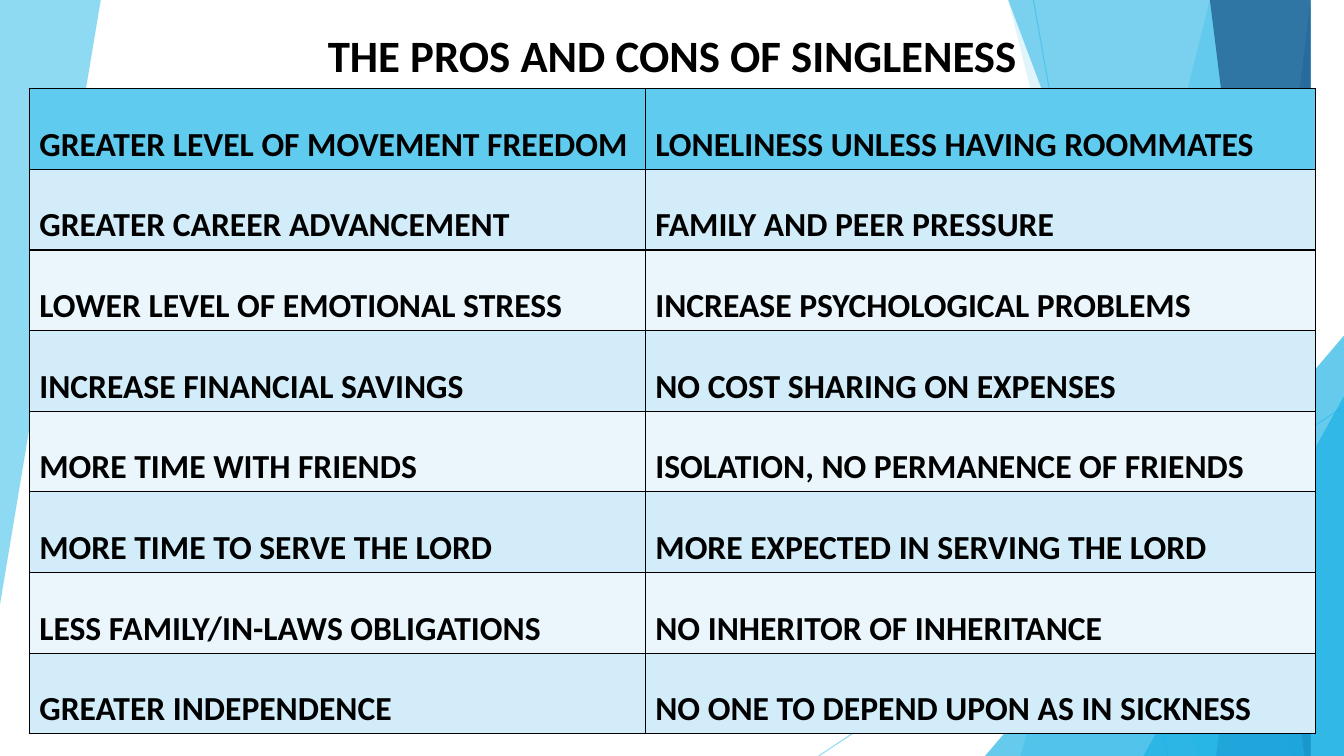
from lxml import etree
from pptx import Presentation
from pptx import util as u
from pptx.dml import color
from pptx.enum import shapes, text
from pptx.oxml import ns

WIDTH, HEIGHT = 13.33, 7.5
SKY, CYAN, BLUE, NAVY = "5FCBEF", "17B0E4", "2E83C3", "226292"
BLACK = "000000"
FONT = "Calibri"

PROS_AND_CONS = [
    ("GREATER LEVEL OF MOVEMENT FREEDOM", "LONELINESS UNLESS HAVING ROOMMATES"),
    ("GREATER CAREER ADVANCEMENT", "FAMILY AND PEER PRESSURE"),
    ("LOWER LEVEL OF EMOTIONAL STRESS", "INCREASE PSYCHOLOGICAL PROBLEMS"),
    ("INCREASE FINANCIAL SAVINGS", "NO COST SHARING ON EXPENSES"),
    ("MORE TIME WITH FRIENDS", "ISOLATION, NO PERMANENCE OF FRIENDS"),
    ("MORE TIME TO SERVE THE LORD", "MORE EXPECTED IN SERVING THE LORD"),
    ("LESS FAMILY/IN-LAWS OBLIGATIONS", "NO INHERITOR OF INHERITANCE"),
    ("GREATER INDEPENDENCE", "NO ONE TO DEPEND UPON AS IN SICKNESS"),
]


def set_color(fill, value, opacity=100):
    """Give a fill a solid colour and, if asked, an opacity in percent."""
    fill.solid()
    fill.fore_color.rgb = color.RGBColor.from_string(value)
    if opacity < 100:
        choice = fill._xPr.find(ns.qn("a:solidFill"))[0]
        etree.SubElement(choice, ns.qn("a:alpha"), val=str(opacity * 1000))


def set_font(paragraph, size):
    paragraph.font.name = FONT
    paragraph.font.size = u.Pt(size)
    paragraph.font.bold = True
    set_color(paragraph.font.fill, BLACK)


def finish_facet(shape, value, opacity):
    shape.shadow.inherit = False
    set_color(shape.fill, value, opacity)
    shape.line.fill.background()


def add_polygon(slide, points, value, opacity):
    builder = slide.shapes.build_freeform(*points[0], scale=u.Inches(1))
    builder.add_line_segments(points[1:], close=True)
    finish_facet(builder.convert_to_shape(), value, opacity)


def add_corner_triangle(slide, right, bottom, width, height):
    triangle = slide.shapes.add_shape(
        shapes.MSO_SHAPE.ISOSCELES_TRIANGLE,
        u.Inches(right - width), u.Inches(bottom - height),
        u.Inches(width), u.Inches(height))
    triangle.adjustments[0] = 1
    finish_facet(triangle, CYAN, 66)


def add_ray(slide, start, end):
    ray = slide.shapes.add_connector(
        shapes.MSO_CONNECTOR.STRAIGHT, *map(u.Inches, start + end))
    ray.line.width = u.Pt(0.75)
    set_color(ray.line.fill, SKY, 70)
    etree.SubElement(ray._element.spPr, ns.qn("a:effectLst"))


def add_backdrop(slide, left, top, width, height):
    right, bottom = left + width, top + height

    def add_side_facet(top_inset, bottom_inset, value, opacity):
        points = [(right - top_inset, top), (right, top),
                  (right, bottom), (right - bottom_inset, bottom)]
        add_polygon(slide, points, value, opacity)

    # Left wedge and thin rays
    wedge = [(left, top), (left + 0.94, top), (left, top + 6.22)]
    add_polygon(slide, wedge, SKY, 70)
    add_ray(slide, (right - 3.08, top), (right - 1.75, bottom))
    add_ray(slide, (right, top + 4.03), (right - 5.21, bottom))

    # Right facets, from back to front
    add_side_facet(1.05, 3.29, SKY, 36)
    add_side_facet(2.83, 1.5, SKY, 20)
    add_corner_triangle(slide, right, bottom, 3.56, 4.17)
    add_side_facet(3.12, 0.42, CYAN, 50)
    add_side_facet(0.3, 1.41, BLUE, 70)
    add_side_facet(1.37, 0.15, NAVY, 80)
    add_corner_triangle(slide, right, bottom, 1.99, 3.57)


def place_title(slide, left, top, width, height):
    title = slide.shapes.title
    title.left, title.top = u.Inches(left), u.Inches(top)
    title.width, title.height = u.Inches(width), u.Inches(height)
    title.text = "THE PROS AND CONS OF SINGLENESS"
    title.text_frame.vertical_anchor = text.MSO_ANCHOR.MIDDLE
    paragraph = title.text_frame.paragraphs[0]
    paragraph.alignment = text.PP_ALIGN.CENTER
    set_font(paragraph, 32)
    # Bring the title in front of the backdrop
    title.element.getparent().append(title.element)


def add_borders(cell):
    properties = cell._tc.get_or_add_tcPr()
    for index, side in enumerate(("lnL", "lnR", "lnT", "lnB")):
        border = etree.Element(ns.qn(f"a:{side}"), w=str(u.Pt(1)))
        fill = etree.SubElement(border, ns.qn("a:solidFill"))
        etree.SubElement(fill, ns.qn("a:srgbClr"), val=BLACK)
        properties.insert(index, border)


def add_comparison(slide, left, top, width, height):
    row_count = len(PROS_AND_CONS)
    table = slide.shapes.add_table(
        row_count, 2, u.Inches(left), u.Inches(top),
        u.Inches(width), u.Inches(height)).table
    pros_width = 6.11
    table.columns[0].width = u.Inches(pros_width)
    table.columns[1].width = u.Inches(width - pros_width)

    for row, entries in enumerate(PROS_AND_CONS):
        table.rows[row].height = u.Inches(height / row_count)
        band = SKY if row == 0 else ("EAF6FC", "D2ECF9")[row % 2]
        for column, entry in enumerate(entries):
            cell = table.cell(row, column)
            cell.text = entry
            cell.vertical_anchor = text.MSO_ANCHOR.BOTTOM
            cell.margin_bottom = u.Inches(0.04)
            set_color(cell.fill, band)
            set_font(cell.text_frame.paragraphs[0], 24)
            add_borders(cell)


def main():
    presentation = Presentation()
    presentation.slide_width = u.Inches(WIDTH)
    presentation.slide_height = u.Inches(HEIGHT)
    slide = presentation.slides.add_slide(presentation.slide_layouts[5])
    add_backdrop(slide, 0, 0, WIDTH, HEIGHT)
    place_title(slide, 0.43, 0.22, 12.48, 0.64)
    add_comparison(slide, 0.29, 0.88, 12.76, 6.4)
    presentation.save("out.pptx")


if __name__ == "__main__":
    main()
